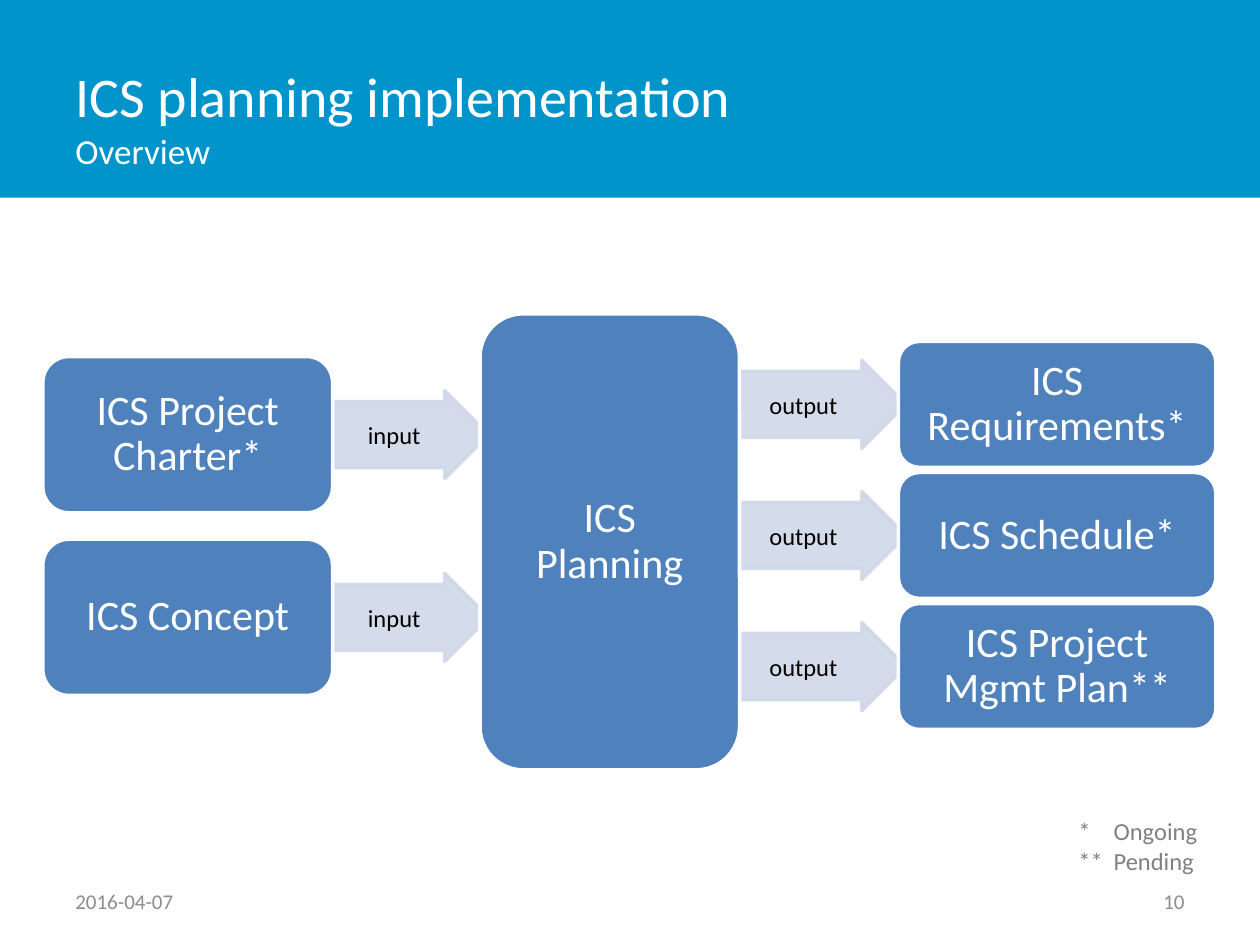
from lxml import etree
from pptx import Presentation
from pptx.dml.color import RGBColor
from pptx.enum.shapes import MSO_SHAPE
from pptx.enum.text import MSO_ANCHOR, PP_ALIGN
from pptx.oxml.ns import qn
from pptx.util import Inches, Pt

RECTANGLE = MSO_SHAPE.RECTANGLE
ROUNDED_RECTANGLE = MSO_SHAPE.ROUNDED_RECTANGLE
RIGHT_ARROW = MSO_SHAPE.RIGHT_ARROW
LEFT, CENTER, RIGHT = PP_ALIGN.LEFT, PP_ALIGN.CENTER, PP_ALIGN.RIGHT
TOP, MIDDLE = MSO_ANCHOR.TOP, MSO_ANCHOR.MIDDLE

COLORS = {
    "banner": "0094CA",
    "box": "4F81BD",
    "arrow": "D0D8E8",
    "white": "FFFFFF",
    "black": "000000",
    "footer": "8C8C8C",
    "legend": "808080",
}
FONT = "Calibri"

ARROW_WIDTH, ARROW_HEIGHT = 1.43, 0.7
INPUTS = ["ICS Project Charter*", "ICS Concept"]
INPUT_LEFT, INPUT_TOP, INPUT_STEP = 0.34, 2.83, 1.45
INPUT_WIDTH, INPUT_HEIGHT = 2.3, 1.24
INPUT_ARROW_LEFT = 2.45
OUTPUTS = ["ICS Requirements*", "ICS Schedule*", "ICS Project Mgmt Plan**"]
OUTPUT_LEFT, OUTPUT_TOP, OUTPUT_STEP = 7.13, 2.71, 1.04
OUTPUT_WIDTH, OUTPUT_HEIGHT = 2.52, 1
OUTPUT_ARROW_LEFT = 5.76


def color(name):
    return RGBColor.from_string(COLORS[name])


class SlideBuilder:
    """Holds the style and the current slide."""

    def __init__(self, slide):
        self.slide = slide

    def fill_text(self, shape, text, size, color_name, align, anchor=MIDDLE):
        """Put text into a shape and format every run alike."""
        text_frame = shape.text_frame
        text_frame.word_wrap = True
        text_frame.vertical_anchor = anchor
        text_frame.text = text
        for paragraph in text_frame.paragraphs:
            paragraph.alignment = align
            for run in paragraph.runs:
                run.font.name = FONT
                run.font.size = Pt(size)
                run.font.color.rgb = color(color_name)
        return text_frame

    def shape(self, kind, left, top, width, height, fill, line=None):
        shape = self.slide.shapes.add_shape(
            kind, Inches(left), Inches(top), Inches(width), Inches(height))
        shape.shadow.inherit = False
        shape.fill.solid()
        shape.fill.fore_color.rgb = color(fill)
        if line:
            shape.line.color.rgb = color(line)
            shape.line.width = Pt(2)
        else:
            shape.line.fill.background()
        return shape

    def text(self, text, left, top, width, height, size, color_name,
             align=LEFT, anchor=MIDDLE):
        box = self.slide.shapes.add_textbox(
            Inches(left), Inches(top), Inches(width), Inches(height))
        return self.fill_text(box, text, size, color_name, align, anchor)

    def box(self, label, left, top, width, height):
        shape = self.shape(ROUNDED_RECTANGLE, left, top, width, height,
                           "box", "white")
        text_frame = self.fill_text(shape, label, 24, "white", CENTER)
        text_frame.margin_left = text_frame.margin_right = Inches(0.15)
        text_frame.paragraphs[0].line_spacing = 0.9

    def arrow(self, label, left, middle):
        """Draw a slightly transparent block arrow centred on a height."""
        shape = self.shape(RIGHT_ARROW, left, middle - ARROW_HEIGHT / 2,
                           ARROW_WIDTH, ARROW_HEIGHT, "arrow", "arrow")
        shape.adjustments[0] = 0.75
        shape.adjustments[1] = 0.5
        for rgb in shape._element.spPr.iter(qn("a:srgbClr")):
            etree.SubElement(rgb, qn("a:alpha"), val="90000")
        text_frame = self.fill_text(shape, label, 14, "black", RIGHT)
        text_frame.margin_right = Inches(0.28)

    def legend(self, entries, left, top, width, height, tab):
        lines = "\n".join(f"{mark}\t{meaning}" for mark, meaning in entries)
        text_frame = self.text(lines, left, top, width, height, 14, "legend",
                               anchor=TOP)
        text_frame.word_wrap = False
        for paragraph in text_frame.paragraphs:
            properties = paragraph._p.get_or_add_pPr()
            tabs = etree.SubElement(properties, qn("a:tabLst"))
            etree.SubElement(tabs, qn("a:tab"), pos=str(Inches(tab)), algn="l")


def main():
    presentation = Presentation()
    presentation.slide_width = Inches(10)
    presentation.slide_height = Inches(7.5)
    builder = SlideBuilder(
        presentation.slides.add_slide(presentation.slide_layouts[6]))

    builder.shape(RECTANGLE, 0, 0, 10, 1.57, "banner")
    title = builder.text("ICS planning implementation\vOverview",
                         0.5, 0.3, 7.81, 1.25, 32, "white")
    title.paragraphs[0].runs[1].font.size = Pt(20)

    for row, label in enumerate(INPUTS):
        top = INPUT_TOP + row * INPUT_STEP
        builder.arrow("input", INPUT_ARROW_LEFT, top + INPUT_HEIGHT / 2)
        builder.box(label, INPUT_LEFT, top, INPUT_WIDTH, INPUT_HEIGHT)

    output_tops = [OUTPUT_TOP + row * OUTPUT_STEP for row in range(len(OUTPUTS))]
    for top in output_tops:
        builder.arrow("output", OUTPUT_ARROW_LEFT, top + OUTPUT_HEIGHT / 2)
    builder.box("ICS Planning", 3.81, 2.49, 2.06, 3.62)
    for label, top in zip(OUTPUTS, output_tops):
        builder.box(label, OUTPUT_LEFT, top, OUTPUT_WIDTH, OUTPUT_HEIGHT)

    builder.legend([("*", "Ongoing"), ("**", "Pending")],
                   8.46, 6.43, 1.15, 0.57, tab=0.28)
    builder.text("2016-04-07", 0.5, 6.95, 2.33, 0.4, 12, "footer")
    builder.text("10", 7.17, 6.95, 2.33, 0.4, 12, "footer", RIGHT)

    presentation.save("out.pptx")


if __name__ == "__main__":
    main()
